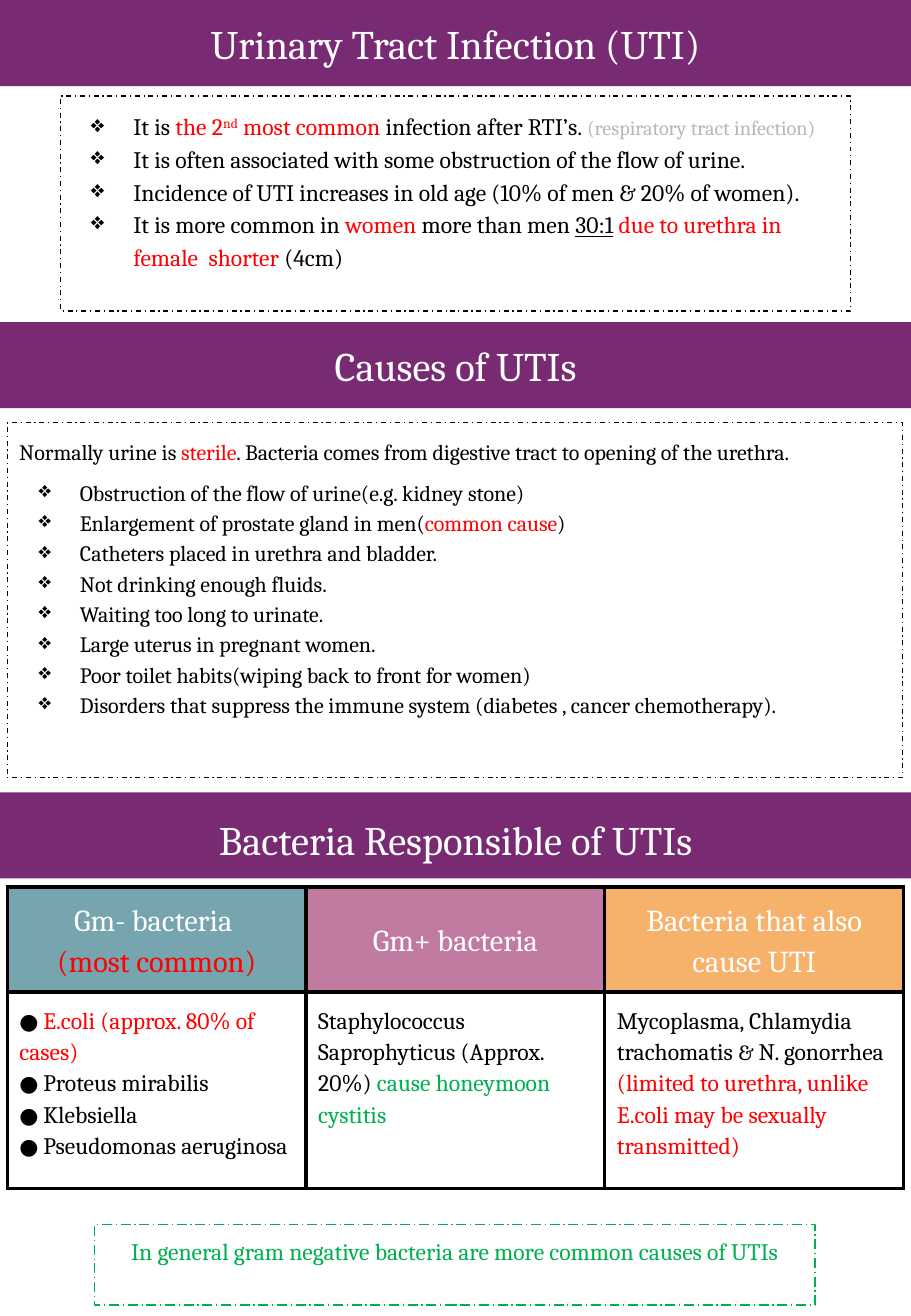
import lxml.etree
import pptx
import pptx.dml.color
import pptx.enum.dml
import pptx.enum.shapes
import pptx.enum.text
import pptx.oxml.ns
import pptx.util

Inches = pptx.util.Inches
Pt = pptx.util.Pt
RGBColor = pptx.dml.color.RGBColor
Dash = pptx.enum.dml.MSO_LINE
Align = pptx.enum.text.PP_ALIGN
Anchor = pptx.enum.text.MSO_ANCHOR

FONT = "Cambria"
PAGE_WIDTH = 7.5
PAGE_HEIGHT = 10.83
BAND_HEIGHT = 0.71
MARGIN = 0.1

BLACK = RGBColor(0x00, 0x00, 0x00)
WHITE = RGBColor(0xFF, 0xFF, 0xFF)
RED = RGBColor(0xFF, 0x00, 0x00)
GREEN = RGBColor(0x00, 0xB0, 0x50)
GREY = RGBColor(0xB7, 0xB7, 0xB7)
PURPLE = RGBColor(0x78, 0x2A, 0x72)
TEAL = RGBColor(0x76, 0xA5, 0xAF)
PINK = RGBColor(0xC2, 0x7B, 0xA0)
ORANGE = RGBColor(0xF6, 0xB2, 0x6B)

OVERVIEW = [
    ["It is ", ("the 2", {"color": RED}),
     ("nd", {"color": RED, "superscript": True}),
     (" most common", {"color": RED}), " infection after RTI’s. ",
     ("(respiratory tract infection)", {"color": GREY, "size": 12})],
    ["It is often associated with some obstruction of the flow of urine."],
    ["Incidence of UTI increases in old age (10% of men & 20% of women)."],
    ["It is more common in ", ("women", {"color": RED}), " more than men ",
     ("30:1", {"underline": True}), " ",
     ("due to urethra in female  shorter ", {"color": RED}), "(4cm)"],
]
CAUSES_INTRO = [
    "Normally urine is ", ("sterile", {"color": RED}),
    ". Bacteria comes from digestive tract to opening of the urethra.",
]
CAUSES = [
    ["Obstruction of the flow of urine(e.g. kidney stone)"],
    ["Enlargement of prostate gland in men(",
     ("common cause", {"color": RED}), ")"],
    ["Catheters placed in urethra and bladder."],
    ["Not drinking enough fluids."],
    ["Waiting too long to urinate."],
    ["Large uterus in pregnant women."],
    ["Poor toilet habits(wiping back to front for women)"],
    ["Disorders that suppress the immune system "
     "(diabetes , cancer chemotherapy)."],
]
DOT = ("● ", {"size": 13})
BACTERIA = [
    (TEAL, [["Gm- bacteria "], [("(most common)", {"color": RED})]],
     [[DOT, ("E.coli (approx. 80% of cases)", {"color": RED})],
      [DOT, "Proteus mirabilis"],
      [DOT, "Klebsiella"],
      [DOT, "Pseudomonas aeruginosa"]]),
    (PINK, [["Gm+ bacteria"]],
     [["Staphylococcus Saprophyticus (Approx. 20%) ",
       ("cause honeymoon cystitis", {"color": GREEN})]]),
    (ORANGE, [["Bacteria that also cause UTI"]],
     [["Mycoplasma, Chlamydia trachomatis ", ("&", {"size": 13}),
       " N. gonorrhea ",
       ("(limited to urethra, unlike E.coli may be sexually transmitted)",
        {"color": RED})]]),
]


def add_child(parent, tag, **attributes):
    child = lxml.etree.SubElement(parent, pptx.oxml.ns.qn(tag))
    for name, value in attributes.items():
        child.set(name, value)
    return child


def add_bullet(paragraph, hanging):
    properties = paragraph._p.get_or_add_pPr()
    properties.set("marL", str(Inches(0.5)))
    properties.set("indent", str(-Inches(hanging)))
    color = add_child(properties, "a:buClr")
    add_child(color, "a:srgbClr", val=str(BLACK))
    add_child(properties, "a:buChar", char="❖")


def add_run(paragraph, text, color=None, size=None, underline=False,
            superscript=False):
    run = paragraph.add_run()
    run.text = text
    if color is not None:
        run.font.color.rgb = color
    if size:
        run.font.size = Pt(size)
    if underline:
        run.font.underline = True
    if superscript:
        run._r.get_or_add_rPr().set("baseline", "30000")


def write_paragraphs(frame, paragraphs, size, color, align=Align.LEFT,
                     spacing=1.15, hanging=None):
    for pieces in paragraphs:
        first = frame.paragraphs[0]
        paragraph = frame.add_paragraph() if first.runs else first
        if hanging:
            add_bullet(paragraph, hanging)
        paragraph.alignment = align
        paragraph.line_spacing = spacing
        paragraph.font.name = FONT
        paragraph.font.size = Pt(size)
        paragraph.font.color.rgb = color
        for piece in pieces:
            text, style = (piece, {}) if isinstance(piece, str) else piece
            add_run(paragraph, text, **style)


def set_margins(holder):
    holder.margin_left = holder.margin_right = Inches(MARGIN)
    holder.margin_top = holder.margin_bottom = Inches(MARGIN)


def add_rectangle(slide, box, anchor):
    shape = slide.shapes.add_shape(
        pptx.enum.shapes.MSO_SHAPE.RECTANGLE, *map(Inches, box))
    shape.shadow.inherit = False
    frame = shape.text_frame
    frame.word_wrap = True
    frame.vertical_anchor = anchor
    set_margins(frame)
    return shape


def add_heading(slide, top, title, spacing=1.0):
    band = add_rectangle(slide, (0, top, PAGE_WIDTH, BAND_HEIGHT),
                         Anchor.MIDDLE)
    band.fill.solid()
    band.fill.fore_color.rgb = PURPLE
    band.line.fill.background()
    write_paragraphs(band.text_frame, [[title]], 24, WHITE, Align.CENTER,
                     spacing)


def add_dashed_box(slide, box, color=BLACK, dash=Dash.DASH_DOT):
    shape = add_rectangle(slide, box, Anchor.TOP)
    shape.fill.background()
    shape.line.color.rgb = color
    shape.line.width = Pt(0.75)
    shape.line.dash_style = dash
    return shape.text_frame


def add_overview(slide, box):
    write_paragraphs(add_dashed_box(slide, box), OVERVIEW, 14, BLACK,
                     hanging=0.35)


def add_causes(slide, box):
    frame = add_dashed_box(slide, box)
    write_paragraphs(frame, [CAUSES_INTRO], 13, BLACK)
    write_paragraphs(frame, CAUSES, 13, BLACK, hanging=0.34)
    frame.paragraphs[0].space_before = Pt(7)
    frame.paragraphs[1].space_before = Pt(6)


def add_borders(cell):
    properties = cell._tc.get_or_add_tcPr()
    for side in ("a:lnL", "a:lnR", "a:lnT", "a:lnB"):
        line = add_child(properties, side, w=str(Pt(2.25)))
        fill = add_child(line, "a:solidFill")
        add_child(fill, "a:srgbClr", val=str(BLACK))


def add_bacteria_table(slide, box, row_heights):
    table = slide.shapes.add_table(
        len(row_heights), len(BACTERIA), *map(Inches, box)).table
    table.first_row = False
    table.horz_banding = False
    for row, height in zip(table.rows, row_heights):
        row.height = Inches(height)
    for index, (color, heading, body) in enumerate(BACTERIA):
        table.columns[index].width = Inches(box[2] / len(BACTERIA))
        header_cell, body_cell = table.cell(0, index), table.cell(1, index)
        for cell in (header_cell, body_cell):
            set_margins(cell)
            add_borders(cell)
        header_cell.vertical_anchor = Anchor.MIDDLE
        header_cell.fill.solid()
        header_cell.fill.fore_color.rgb = color
        body_cell.fill.background()
        write_paragraphs(header_cell.text_frame, heading, 18, WHITE,
                         Align.CENTER)
        write_paragraphs(body_cell.text_frame, body, 14, BLACK)


def add_summary(slide, box):
    frame = add_dashed_box(slide, box, GREEN, Dash.LONG_DASH_DOT)
    text = "In general gram negative bacteria are more common causes of UTIs"
    write_paragraphs(frame, [[text]], 14, GREEN, Align.CENTER, 1.0)


def main():
    presentation = pptx.Presentation()
    presentation.slide_width = Inches(PAGE_WIDTH)
    presentation.slide_height = Inches(PAGE_HEIGHT)
    slide = presentation.slides.add_slide(presentation.slide_layouts[6])
    add_heading(slide, 0, "Urinary Tract Infection (UTI)")
    add_overview(slide, (0.5, 0.79, 6.5, 1.77))
    add_heading(slide, 2.65, "Causes of UTIs")
    add_causes(slide, (0.06, 3.48, 7.37, 2.92))
    add_heading(slide, 6.52, "Bacteria Responsible of UTIs", 1.15)
    add_bacteria_table(slide, (0.06, 7.3, 7.38, 2.48), (0.86, 1.62))
    add_summary(slide, (0.78, 10.08, 5.93, 0.66))
    presentation.save("out.pptx")


if __name__ == "__main__":
    main()
